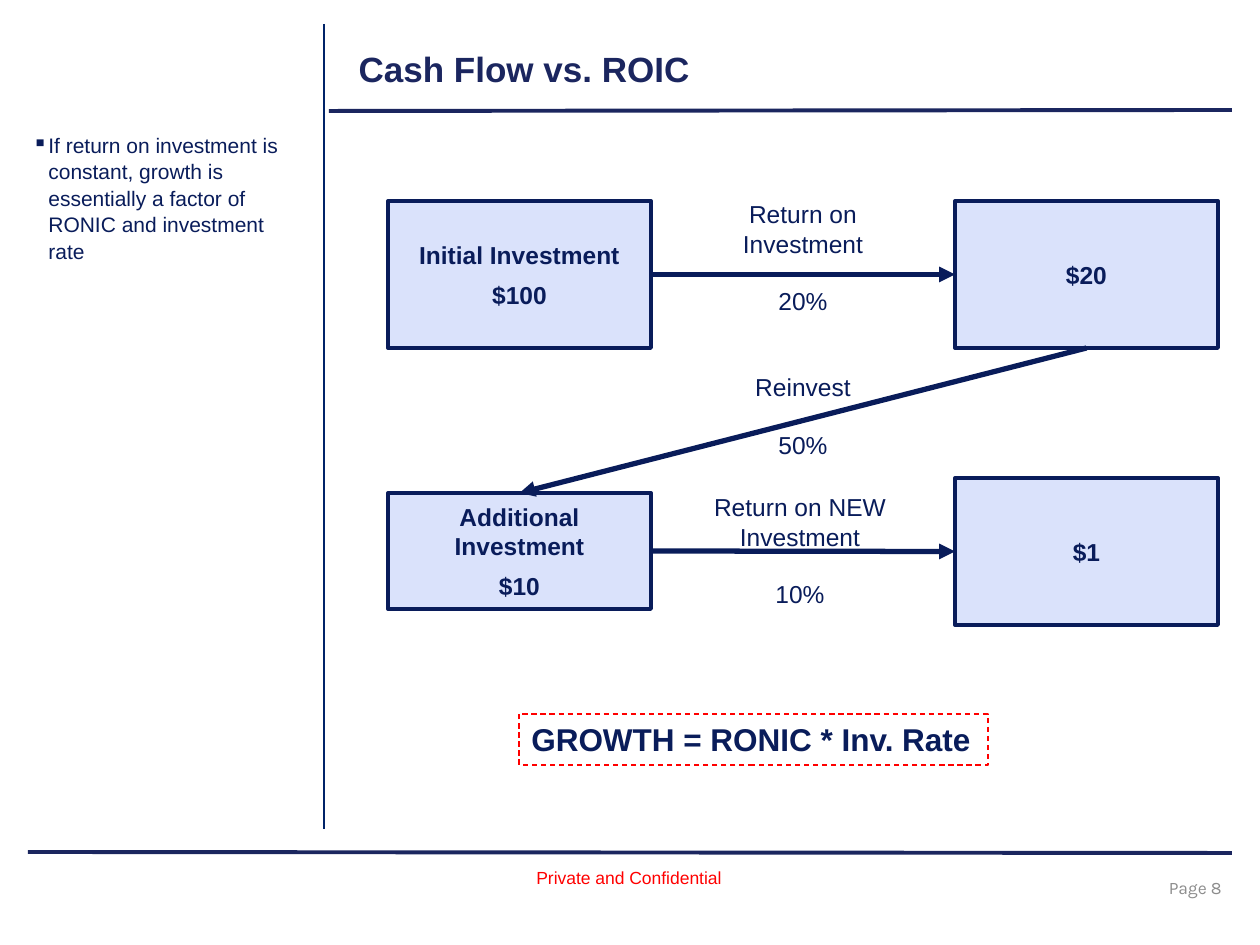
from lxml import etree
from pptx import Presentation
from pptx import util as u
from pptx.dml.color import RGBColor
from pptx.enum import dml, shapes, text
from pptx.oxml.ns import qn

SCALE = u.Inches(1) / 126
NAVY, INK, RULE = "1B265F", "091C5A", "002368"
PALE, RED, GREY = "DAE2FB", "FF0000", "8C8C8C"
LEFT, MID, RIGHT = text.PP_ALIGN.LEFT, text.PP_ALIGN.CENTER, text.PP_ALIGN.RIGHT


def px(n):
    return u.Emu(round(n * SCALE))


def rgb(code):
    return RGBColor.from_string(code)


class Deck:
    def __init__(self):
        self.prs = Presentation()
        self.prs.slide_width, self.prs.slide_height = px(1260), px(945)
        self.slide = self.prs.slides.add_slide(self.prs.slide_layouts[5])
        self.shapes = self.slide.shapes

    def words(self, shape, lines, size, color=INK, bold=False, align=LEFT,
              font="Arial", before=0, after=0):
        """Fill a shape with one paragraph per line; before skips the first."""
        frame = shape.text_frame
        frame.text = "\n".join(lines)
        for i, para in enumerate(frame.paragraphs):
            para.alignment = align
            para.space_before = u.Pt(before if i else 0)
            para.space_after = u.Pt(after)
            for run in para.runs:
                run.font.name, run.font.size = font, u.Pt(size)
                run.font.bold, run.font.color.rgb = bold, rgb(color)
        return frame

    def title(self, name, x, y, w, h):
        head = self.shapes.title
        head.left, head.top, head.width, head.height = map(px, (x, y, w, h))
        frame = self.words(head, [name], 20, NAVY, True)
        frame.vertical_anchor = text.MSO_ANCHOR.MIDDLE
        frame.margin_bottom = px(13)
        frame.auto_size = text.MSO_AUTO_SIZE.NONE

    def label(self, lines, x, y, w, h, size, wrap=True, **style):
        box = self.shapes.add_textbox(*map(px, (x, y, w, h)))
        self.words(box, lines, size, **style).word_wrap = wrap
        return box

    def bullet(self, line, x, y, w, h):
        box = self.label([line], x, y, w, h, 12)
        para = box.text_frame.paragraphs[0]
        para.line_spacing = 1.05
        props = para._p.get_or_add_pPr()
        props.set("marL", str(px(16)))
        props.set("indent", str(-px(16)))
        etree.SubElement(props, qn("a:buChar")).set("char", "▪")

    def block(self, lines, x, y, w, h):
        box = self.shapes.add_shape(shapes.MSO_SHAPE.RECTANGLE,
                                    *map(px, (x, y, w, h)))
        box.shadow.inherit = False
        box.fill.solid()
        box.fill.fore_color.rgb = rgb(PALE)
        box.line.color.rgb, box.line.width = rgb(INK), u.Pt(2.25)
        frame = self.words(box, lines, 14, bold=True, align=MID, after=6)
        frame.vertical_anchor = text.MSO_ANCHOR.MIDDLE
        return box

    def line(self, x1, y1, x2, y2, color, width):
        link = self.shapes.add_connector(shapes.MSO_CONNECTOR.STRAIGHT,
                                         *map(px, (x1, y1, x2, y2)))
        link.line.color.rgb, link.line.width = rgb(color), u.Pt(width)
        etree.SubElement(link._element.spPr, qn("a:effectLst"))
        return link

    def arrow(self, start, out, end, into):
        """Join two blocks at the given connection sites."""
        link = self.line(0, 0, 0, 0, INK, 3)
        link.begin_connect(start, out)
        link.end_connect(end, into)
        tip = etree.SubElement(link.line._get_or_add_ln(), qn("a:tailEnd"))
        tip.set("type", "triangle")


def main():
    deck = Deck()

    # Page frame
    deck.line(28, 852, 1232, 853, NAVY, 2.25)
    deck.line(329, 111, 1232, 110, NAVY, 2.25)
    deck.line(324, 24, 324, 829, RULE, 0.75)
    page = deck.label(["Page 8"], 940, 863, 294, 50, 10, color=GREY,
                      align=RIGHT, font="Karla")
    page.text_frame.vertical_anchor = text.MSO_ANCHOR.MIDDLE
    deck.label(["Private and Confidential"], 524, 861, 212, 34, 10,
               wrap=False, color=RED)

    deck.title("Cash Flow vs. ROIC", 346, 38, 851, 67)
    deck.bullet("If return on investment is constant, growth is essentially "
                "a factor of RONIC and investment rate", 20, 125, 284, 677)

    # Flow of cash
    first = deck.block(["Initial Investment", "$100"], 388, 201, 263, 147)
    gain = deck.block(["$20"], 955, 201, 263, 147)
    extra = deck.block(["Additional Investment", "$10"], 388, 493, 263, 116)
    more = deck.block(["$1"], 955, 478, 263, 147)
    deck.arrow(first, 3, gain, 1)
    deck.arrow(gain, 2, extra, 0)
    deck.arrow(extra, 3, more, 1)

    steps = [("Return on Investment", "20%", 693, 193, 131),
             ("Reinvest", "50%", 693, 366, 102),
             ("Return on NEW Investment", "10%", 690, 486, 131)]
    for name, rate, x, y, h in steps:
        deck.label([name, rate], x, y, 220, h, 14, align=MID, before=16)

    rule = deck.label(["GROWTH = RONIC * Inv. Rate"], 519, 714, 469, 51, 18,
                      wrap=False, bold=True)
    rule.line.color.rgb, rule.line.width = rgb(RED), u.Pt(0.75)
    rule.line.dash_style = dml.MSO_LINE.DASH

    deck.prs.save("out.pptx")


if __name__ == "__main__":
    main()
